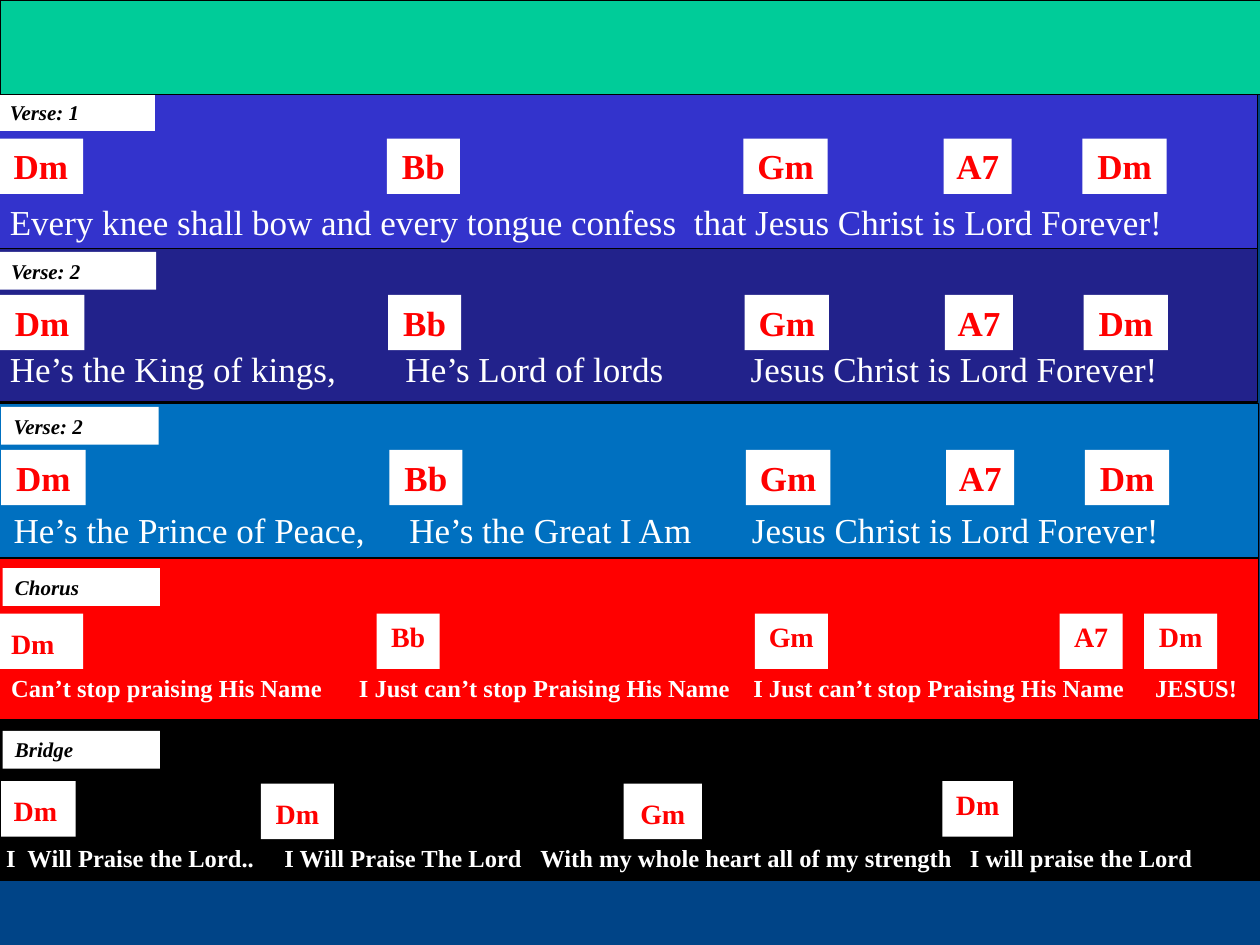
from pptx import Presentation
from pptx.dml.color import RGBColor as Rgb
from pptx.enum.shapes import MSO_SHAPE as Shape
from pptx.enum.text import MSO_ANCHOR as Anchor, PP_ALIGN as Align
from pptx.oxml.ns import qn
from pptx.util import Inches, Pt
from lxml.etree import SubElement

COLORS = {
    "page": "004487", "header": "00CC99", "verse1": "3333CC", "verse2": "22228B",
    "verse3": "0070C0", "chorus": "FF0000", "bridge": "000000",
    "chord": "FF0000", "white": "FFFFFF", "black": "000000",
}
FONT = "Times New Roman"

VERSE_CHORDS = [("Dm", 0, 0.67), ("Bb", 3.08, 0.58), ("Gm", 5.91, 0.67),
                ("A7", 7.5, 0.54), ("Dm", 8.6, 0.67)]
VERSES = [
    {"fill": "verse1", "area": (-0.02, 0.75, 10, 1.22), "label": ("Verse: 1", -0.02, 0.74),
     "shift": -0.01, "chord_top": 1.1, "lyric_at": (-0.02, 1.54), "tabs": [5.43],
     "lyric": ["Every knee shall bow and every tongue confess",
               "that Jesus Christ is Lord Forever!"]},
    {"fill": "verse2", "area": (-0.02, 1.97, 10, 1.22), "label": ("Verse: 2", -0.01, 2),
     "shift": 0, "chord_top": 2.34, "lyric_at": (-0.02, 2.71), "tabs": [3.14, 5.88],
     "lyric": ["He’s the King of kings,", "He’s Lord of lords", "Jesus Christ is Lord Forever!"]},
    {"fill": "verse3", "area": (-0.01, 3.2, 10, 1.23), "label": ("Verse: 2", 0.01, 3.23),
     "shift": 0.01, "chord_top": 3.57, "lyric_at": (0.01, 3.99), "tabs": [3.14, 5.86],
     "lyric": ["He’s the Prince of Peace,", "He’s the Great I Am", "Jesus Christ is Lord Forever!"]},
]
REFRAINS = [
    {"fill": "chorus", "area": (-0.01, 4.43, 10, 1.28), "label": ("Chorus", 0.02, 4.51),
     "chords": [("Dm", -0.01, 4.87, 0.67, Align.LEFT, 0.1), ("Bb", 2.99, 4.87, 0.5),
                ("Gm", 5.99, 4.87, 0.58), ("A7", 8.41, 4.87, 0.5), ("Dm", 9.08, 4.87, 0.58)],
     "lyric_at": (-0.01, 5.29), "tabs": [2.76, 5.89, 9.08],
     "lyric": ["Can’t stop praising His Name", "I Just can’t stop Praising His Name",
               "I Just can’t stop Praising His Name", "JESUS!"]},
    {"fill": "bridge", "area": (0, 5.72, 10.03, 1.27), "label": ("Bridge", 0.02, 5.8),
     "chords": [("Dm", 0.01, 6.2, 0.59, Align.LEFT, 0.1), ("Dm", 2.07, 6.22, 0.58, Align.CENTER, 0.1),
                ("Gm", 4.95, 6.22, 0.62, Align.CENTER, 0.1), ("Dm", 7.48, 6.2, 0.56)],
     "lyric_at": (-0.05, 6.64), "tabs": [0.17, 2.21, 4.24, 7.65],
     "lyric": ["I", "Will Praise the Lord..", "I Will Praise The Lord",
               "With my whole heart all of my strength", "I will praise the Lord"]},
]


class SongSheet:
    """Holds the text style and the page, and draws each kind of element."""

    def __init__(self, page):
        self.page = page
        page.background.fill.solid()
        page.background.fill.fore_color.rgb = self.color("page")

    def color(self, name):
        return Rgb.from_string(COLORS[name])

    def apply(self, target, values):
        for name, value in values.items():
            setattr(target, name, value)

    def rectangle(self, area, fill, outlined=False):
        box = self.page.shapes.add_shape(Shape.RECTANGLE, *map(Inches, area))
        box.shadow.inherit = False
        box.fill.solid()
        box.fill.fore_color.rgb = self.color(fill)
        if outlined:
            box.line.color.rgb = self.color("black")
            box.line.width = Pt(0.75)
        else:
            box.line.fill.background()
        return box

    def add_words(self, box, text, color, font, align=Align.LEFT, drop=0.05):
        frame = box.text_frame
        self.apply(frame, {"word_wrap": align == Align.LEFT, "vertical_anchor": Anchor.TOP,
                           "margin_top": Inches(drop)})
        para = frame.paragraphs[0]
        para.alignment = align
        span = para.add_run()
        span.text = text
        self.apply(span.font, {"name": FONT, **font})
        span.font.color.rgb = self.color(color)
        return para

    def band(self, area, fill):
        self.rectangle(area, fill, outlined=True)

    def label(self, text, left, top):
        box = self.rectangle((left, top, 1.25, 0.3), "white")
        self.add_words(box, text, "black", {"size": Pt(12), "bold": True, "italic": True})

    def chord(self, text, left, top, width, align=Align.CENTER, drop=0.05, size=16):
        box = self.rectangle((left, top, width, 0.44), "white")
        self.add_words(box, text, "chord", {"size": Pt(size), "bold": True}, align, drop)

    def lyric(self, phrases, at, tabs, height, font):
        box = self.page.shapes.add_textbox(*map(Inches, (*at, 10, height)))
        para = self.add_words(box, "\t".join(phrases), "white", font)
        stops = SubElement(para._p.get_or_add_pPr(), qn("a:tabLst"))
        for position in tabs:
            SubElement(stops, qn("a:tab"), pos=str(Inches(position)), algn="l")


def main():
    deck = Presentation()
    deck.slide_width, deck.slide_height = Inches(10), Inches(7.5)
    sheet = SongSheet(deck.slides.add_slide(deck.slide_layouts[6]))

    for part in VERSES + REFRAINS:
        sheet.band(part["area"], part["fill"])
    for verse in VERSES:
        sheet.lyric(verse["lyric"], verse["lyric_at"], verse["tabs"], 0.44, {"size": Pt(20)})
        for name, left, width in VERSE_CHORDS:
            sheet.chord(name, left + verse["shift"], verse["chord_top"], width, size=20)
        sheet.label(*verse["label"])
    for refrain in REFRAINS:
        sheet.lyric(refrain["lyric"], refrain["lyric_at"], refrain["tabs"], 0.33,
                    {"size": Pt(14), "bold": True})
        for chord in refrain["chords"]:
            sheet.chord(*chord)
        sheet.label(*refrain["label"])
    sheet.band((0, 0, 10.03, 0.75), "header")

    deck.save("out.pptx")


if __name__ == "__main__":
    main()
